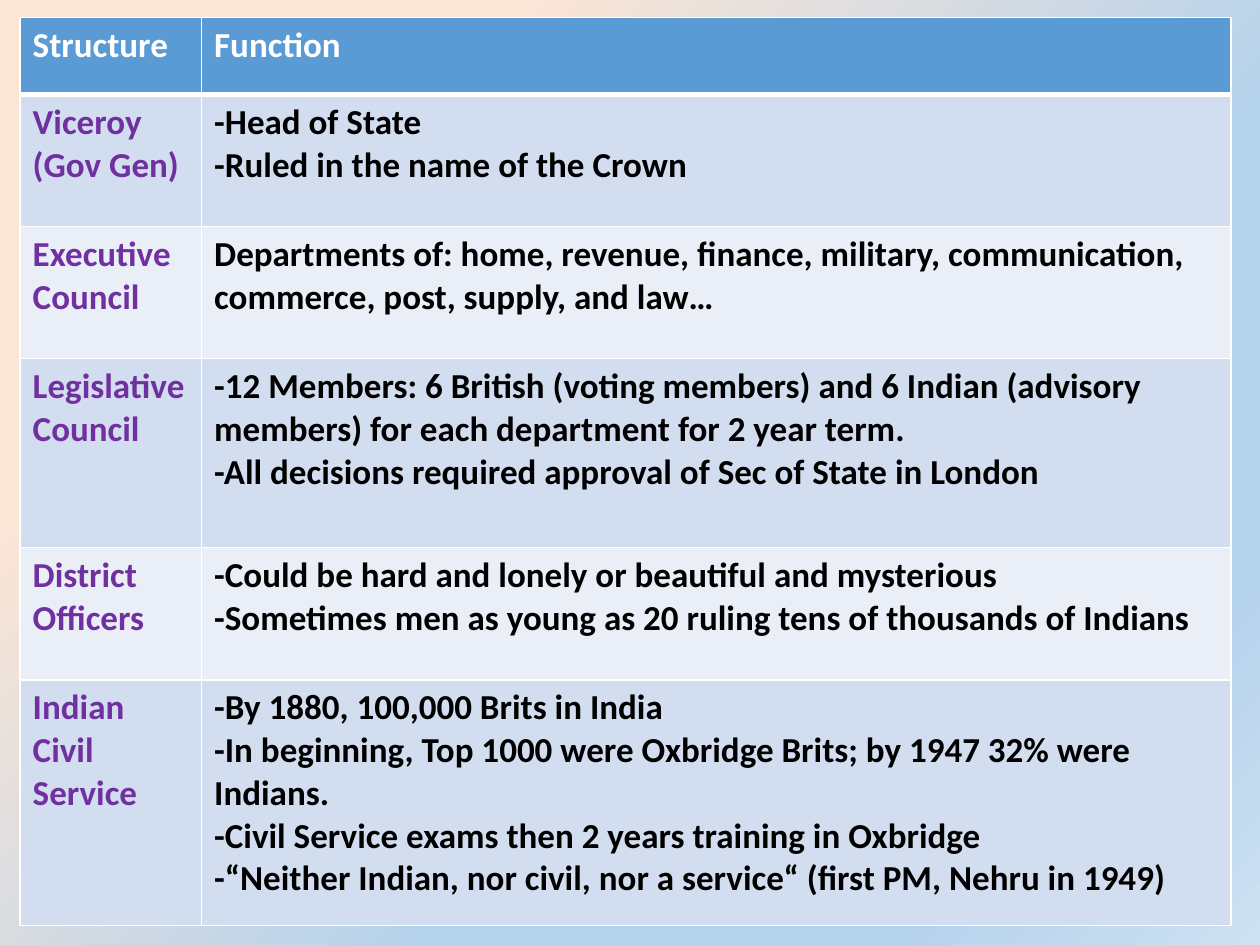
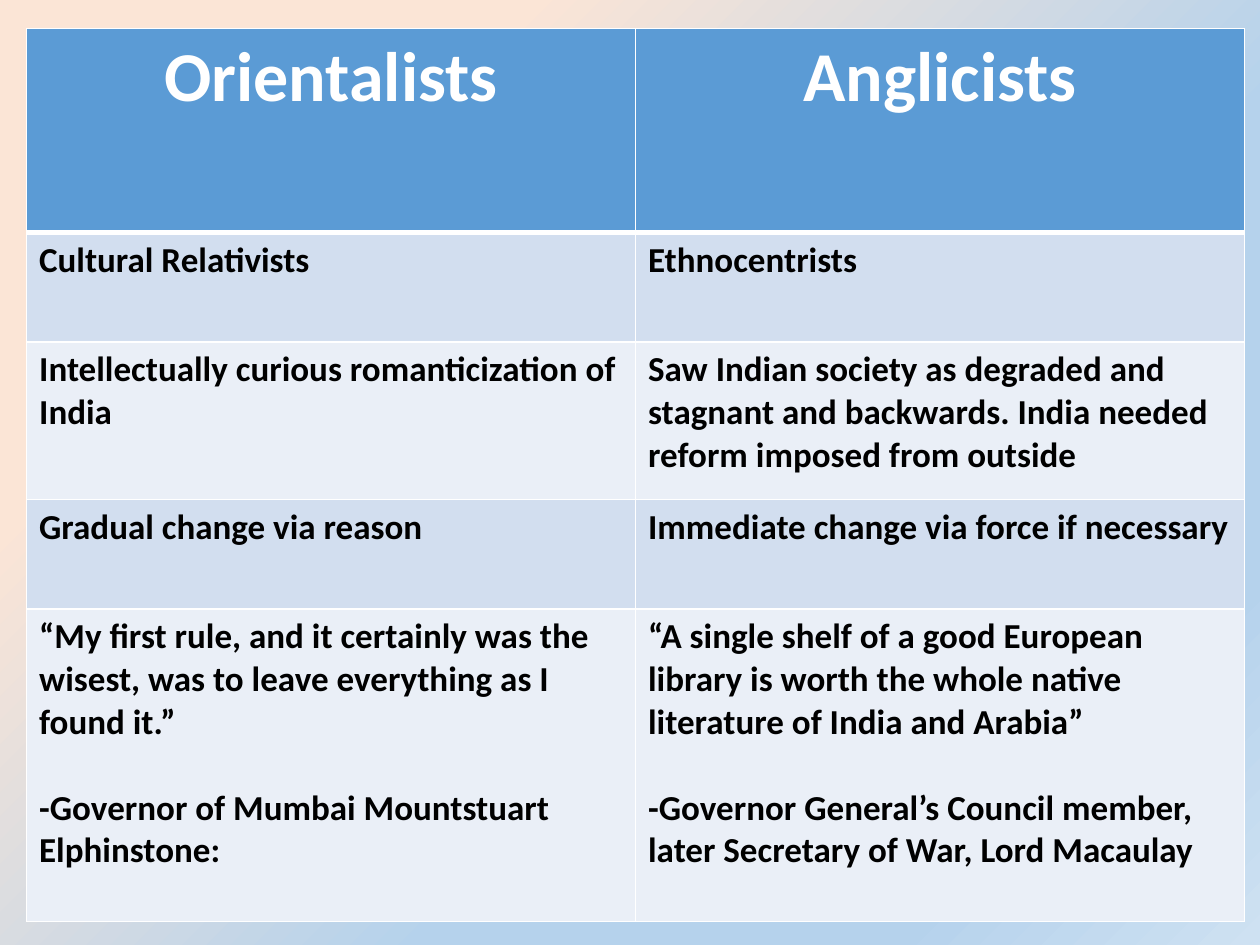
from dataclasses import dataclass

from lxml.etree import SubElement
from pptx import Presentation
from pptx.dml.color import RGBColor
from pptx.enum.text import PP_ALIGN
from pptx.oxml.ns import qn
from pptx.slide import Slide
from pptx.table import _Cell as Cell
from pptx.util import Pt

FACE = "Calibri"
SIZE = 20
WHITE, BLACK, PURPLE = "FFFFFF", "000000", "7030A0"
HEAD, BANDS = "5B9BD5", ("D2DEEF", "EAEFF7")
STOPS = ((24, "FBE5D6", 100), (62, "B5D2EC", 0),
         (83, "B5D2EC", 100), (100, "CEE1F2", 100))


@dataclass
class Grid:
    """Hold the place, look and text of one table."""
    left: float
    top: float
    cols: list[float]
    rows: list[float]
    cells: list[tuple[str, str]]
    lead: str = BLACK
    size: int = SIZE
    align: PP_ALIGN = PP_ALIGN.LEFT
    gap: float = 0


RULE = Grid(
    11.5, 10, [103.7, 588.3], [44, 75.5, 75.5, 108, 75.5, 140.5],
    [
        ("Structure", "Function"),
        ("Viceroy\n(Gov Gen)",
         "-Head of State\n-Ruled in the name of the Crown"),
        ("Executive Council",
         "Departments of: home, revenue, finance, military, communication, "
         "commerce, post, supply, and law…"),
        ("Legislative Council",
         "-12 Members: 6 British (voting members) and 6 Indian (advisory "
         "members) for each department for 2 year term.\n"
         "-All decisions required approval of Sec of State in London"),
        ("District Officers",
         "-Could be hard and lonely or beautiful and mysterious\n"
         "-Sometimes men as young as 20 ruling tens of thousands of Indians"),
        ("Indian Civil Service",
         "-By 1880, 100,000 Brits in India\n"
         "-In beginning, Top 1000 were Oxbridge Brits; by 1947 32% were "
         "Indians.\n"
         "-Civil Service exams then 2 years training in Oxbridge\n"
         "-“Neither Indian, nor civil, nor a service“ "
         "(first PM, Nehru in 1949)"),
    ],
    lead=PURPLE,
)

VIEWS = Grid(
    15.2, 16.3, [348, 348], [116.6, 62.6, 90, 62.6, 178.5],
    [
        ("Orientalists", "Anglicists"),
        ("Cultural Relativists", "Ethnocentrists"),
        ("Intellectually curious romanticization of India",
         "Saw Indian society as degraded and stagnant and backwards. "
         "India needed reform imposed from outside"),
        ("Gradual change via reason",
         "Immediate change via force if necessary"),
        ("“My first rule, and it certainly was the wisest, was to leave "
         "everything as I found it.”\n"
         "-Governor of Mumbai Mountstuart Elphinstone:",
         "“A single shelf of a good European library is worth the whole "
         "native literature of India and Arabia”\n"
         "-Governor General’s Council member, later Secretary of War, "
         "Lord Macaulay"),
    ],
    size=40, align=PP_ALIGN.CENTER, gap=24.4,
)


def tint(code: str) -> RGBColor:
    """Turn a hex string into a colour."""
    return RGBColor.from_string(code)


def shade(slide: Slide) -> None:
    """Give the slide its diagonal gradient."""
    fill = slide.background.fill
    fill.gradient()
    fill.gradient_angle = 315
    stops = slide.element.find(".//" + qn("a:gsLst"))
    stops.clear()
    for spot, code, solid in STOPS:
        stop = SubElement(stops, qn("a:gs"), pos=str(spot * 1000))
        tone = SubElement(stop, qn("a:srgbClr"), val=code)
        if solid < 100:
            SubElement(tone, qn("a:alpha"), val=str(solid * 1000))


def edge(cell: Cell, top: int, base: int) -> None:
    """Draw white borders round a cell."""
    props = cell._tc.get_or_add_tcPr()
    for side, width in (("L", 1), ("R", 1), ("T", top), ("B", base)):
        line = SubElement(props, qn(f"a:ln{side}"), w=str(Pt(width)))
        fill = SubElement(line, qn("a:solidFill"))
        SubElement(fill, qn("a:srgbClr"), val=WHITE)


def write(cell: Cell, text: str, size: int, code: str,
          align: PP_ALIGN, gap: float) -> None:
    """Fill a cell with bold text, one paragraph a line."""
    cell.text = text
    for index, para in enumerate(cell.text_frame.paragraphs):
        para.alignment = align
        if index and gap:
            para.space_before = Pt(gap)
        font = para.font
        font.name, font.size, font.bold = FACE, Pt(size), True
        font.color.rgb = tint(code)


def draw(slide: Slide, grid: Grid) -> None:
    """Draw a banded table on the slide."""
    table = slide.shapes.add_table(
        len(grid.rows), len(grid.cols), Pt(grid.left), Pt(grid.top),
        Pt(sum(grid.cols)), Pt(sum(grid.rows))).table
    for col, width in zip(table.columns, grid.cols):
        col.width = Pt(width)
    for row, height in zip(table.rows, grid.rows):
        row.height = Pt(height)
    for y, texts in enumerate(grid.cells):
        for x, text in enumerate(texts):
            cell = table.cell(y, x)
            edge(cell, 3 if y == 1 else 1, 1 if y else 3)
            cell.fill.solid()
            cell.fill.fore_color.rgb = tint(BANDS[(y - 1) % 2] if y else HEAD)
            if y:
                code = BLACK if x else grid.lead
                write(cell, text, SIZE, code, PP_ALIGN.LEFT, grid.gap)
            else:
                write(cell, text, grid.size, WHITE, grid.align, 0)


def main() -> None:
    """Build and save the deck."""
    deck = Presentation()
    deck.slide_width, deck.slide_height = Pt(720), Pt(540)
    for grid in (RULE, VIEWS):
        slide = deck.slides.add_slide(deck.slide_layouts[6])
        shade(slide)
        draw(slide, grid)
    deck.save("out.pptx")


if __name__ == "__main__":
    main()
